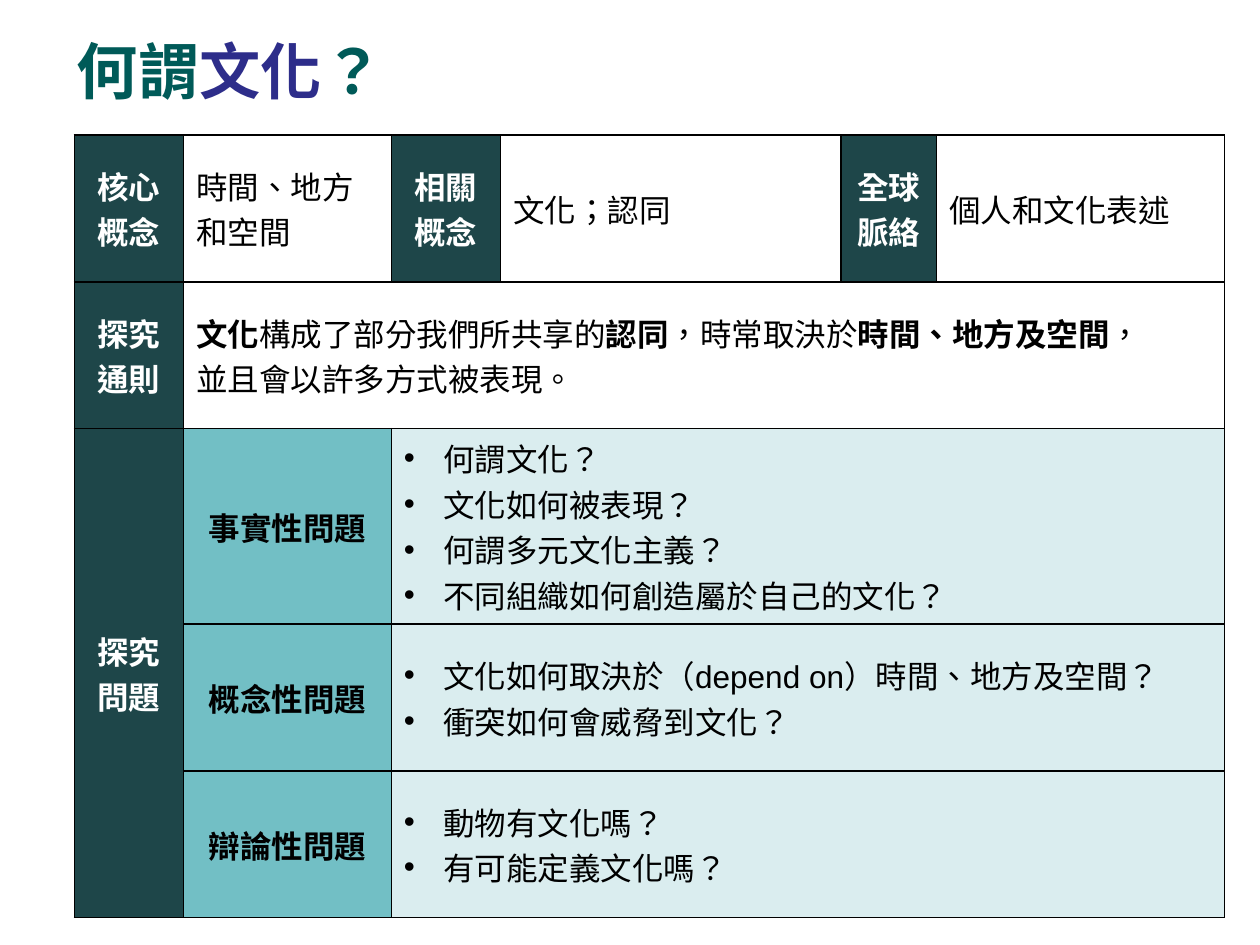
from dataclasses import dataclass
from typing import Any

from lxml.etree import SubElement
from pptx import Presentation
from pptx.dml.color import RGBColor
from pptx.enum.lang import MSO_LANGUAGE_ID as Language
from pptx.enum.text import MSO_ANCHOR as Anchor, PP_ALIGN as Align
from pptx.oxml.ns import qn
from pptx.util import Cm, Pt

DARK, MID, PALE = "1E4649", "72BFC5", "DAEDEF"
BLACK, WHITE, GREEN, INDIGO = "000000", "FFFFFF", "005A58", "2D2D8A"


def colour(hex_text):
    return RGBColor.from_string(hex_text)


def write(paragraph, text, size=18, ink=BLACK, bold=False, font="Arial"):
    run = paragraph.add_run()
    run.text = text
    run.font.name = font
    run.font.size = Pt(size)
    run.font.bold = bold
    run.font.language_id = Language.TRADITIONAL_CHINESE
    run.font.color.rgb = colour(ink)


@dataclass
class Deck:
    slide: Any
    border: str = BLACK
    border_width: float = 1
    bullet_indent: float = 0.79

    def title(self, left, top, width, height, parts):
        heading = self.slide.shapes.add_textbox(Cm(left), Cm(top), Cm(width), Cm(height))
        frame = heading.text_frame
        frame.word_wrap = True
        frame.vertical_anchor = Anchor.MIDDLE
        for text, ink in parts:
            write(frame.paragraphs[0], text, size=35, ink=ink, bold=True)

    def grid(self, left, top, widths, heights):
        frame = self.slide.shapes.add_table(
            len(heights), len(widths), Cm(left), Cm(top), Cm(sum(widths)), Cm(sum(heights)))
        table = frame.table
        table.first_row = table.horz_banding = False
        for column, width in zip(table.columns, widths):
            column.width = Cm(width)
        for row, height in zip(table.rows, heights):
            row.height = Cm(height)
        for cell in table.iter_cells():
            self.outline(cell)
            cell.fill.background()
        return table

    def outline(self, cell):
        properties = cell._tc.get_or_add_tcPr()
        for side in ("lnL", "lnR", "lnT", "lnB"):
            line = SubElement(properties, qn(f"a:{side}"), w=str(Pt(self.border_width)))
            fill = SubElement(line, qn("a:solidFill"))
            SubElement(fill, qn("a:srgbClr"), val=self.border)

    def cell(self, cell, paragraphs, fill=None, align=Align.LEFT, bullets=False, **style):
        cell.vertical_anchor = Anchor.MIDDLE
        if fill:
            cell.fill.solid()
            cell.fill.fore_color.rgb = colour(fill)
        frame = cell.text_frame
        for index, runs in enumerate(paragraphs):
            paragraph = frame.add_paragraph() if index else frame.paragraphs[0]
            paragraph.alignment = align
            if bullets:
                self.bullet(paragraph)
            for text, bold in runs:
                write(paragraph, text, bold=bold, **style)

    def bullet(self, paragraph):
        properties = paragraph._p.get_or_add_pPr()
        indent = Cm(self.bullet_indent)
        properties.set("marL", str(indent))
        properties.set("indent", str(-indent))
        SubElement(properties, qn("a:buFont"), typeface="Arial")
        SubElement(properties, qn("a:buChar"), char="•")

    def header(self, cell, text, fill=DARK, ink=WHITE):
        self.cell(cell, [[(text, True)]], fill=fill, align=Align.CENTER, ink=ink)


def main():
    presentation = Presentation()
    presentation.slide_width, presentation.slide_height = Cm(25.4), Cm(19.05)
    deck = Deck(presentation.slides.add_slide(presentation.slide_layouts[6]))

    deck.title(1.3, 0.53, 22.86, 1.75, [("何謂", GREEN), ("文化", INDIGO), ("？", GREEN)])

    unit = deck.grid(1.5, 2.72, [2.2, 4.19, 2.2, 6.86, 1.93, 5.8],
                     [2.96, 2.96, 3.94, 2.96, 2.96])
    unit.cell(1, 1).merge(unit.cell(1, 5))
    unit.cell(2, 0).merge(unit.cell(4, 0))

    concepts = [("核心概念", "時間、地方和空間"), ("相關概念", "文化；認同"), ("全球脈絡", "個人和文化表述")]
    for index, (label, content) in enumerate(concepts):
        deck.header(unit.cell(0, 2 * index), label)
        deck.cell(unit.cell(0, 2 * index + 1), [[(content, False)]])

    deck.header(unit.cell(1, 0), "探究通則")
    statement = [("文化", True), ("構成了部分我們所共享的", False), ("認同", True),
                 ("，時常取決於", False), ("時間、地方及空間", True), ("，", False)]
    deck.cell(unit.cell(1, 1), [statement, [("並且會以許多方式被表現。", False)]])

    deck.header(unit.cell(2, 0), "探究問題")
    inquiries = [
        ("事實性問題", ["何謂文化？", "文化如何被表現？", "何謂多元文化主義？",
                   "不同組織如何創造屬於自己的文化？"]),
        ("概念性問題", ["文化如何取決於（depend on）時間、地方及空間？", "衝突如何會威脅到文化？"]),
        ("辯論性問題", ["動物有文化嗎？", "有可能定義文化嗎？"]),
    ]
    for row, (kind, questions) in enumerate(inquiries, start=2):
        unit.cell(row, 2).merge(unit.cell(row, 5))
        deck.header(unit.cell(row, 1), kind, fill=MID, ink=BLACK)
        deck.cell(unit.cell(row, 2), [[(question, False)] for question in questions],
                  fill=PALE, bullets=True)

    presentation.save("out.pptx")


if __name__ == "__main__":
    main()
